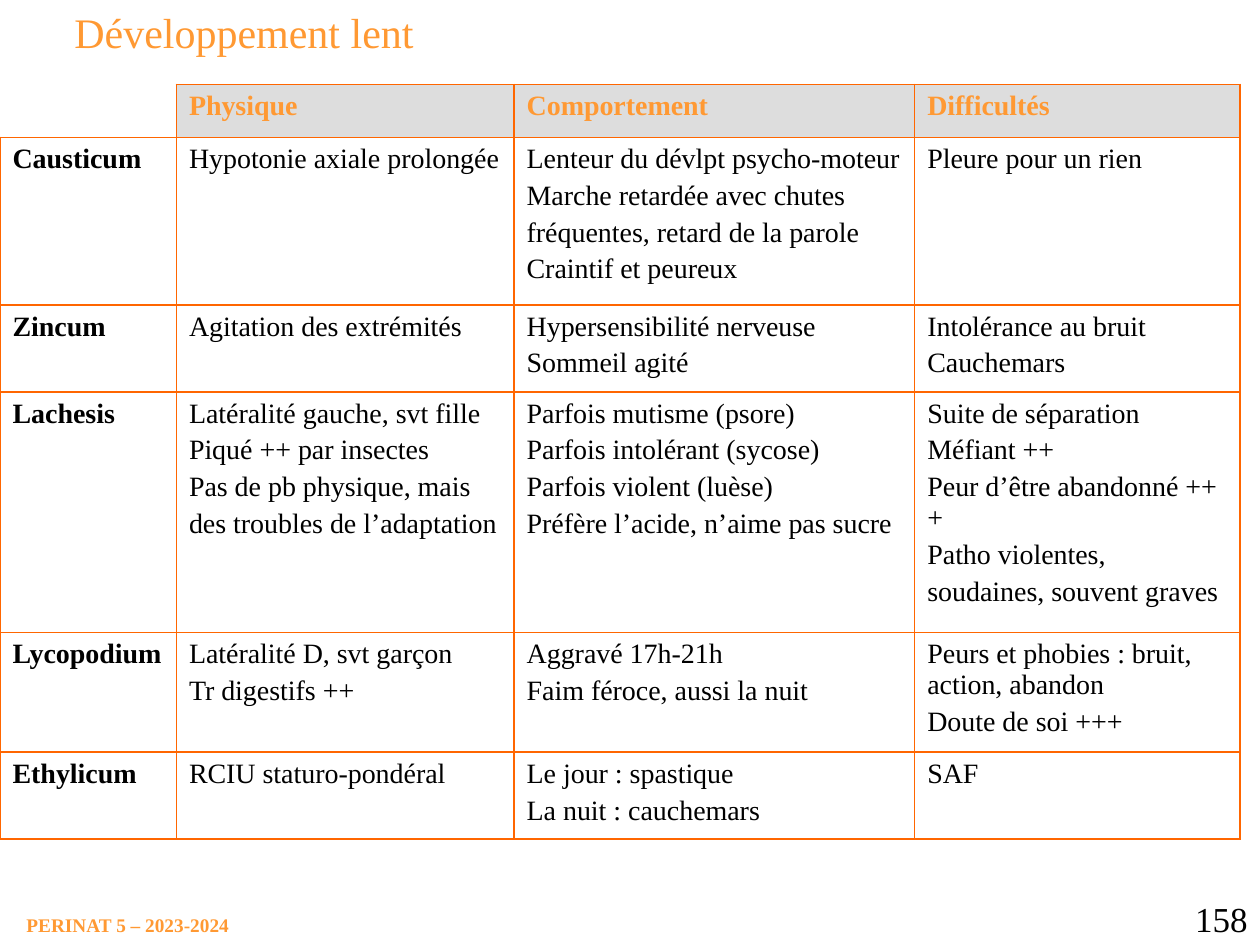
from lxml import etree
from pptx import Presentation
from pptx.dml.color import RGBColor
from pptx.enum.text import MSO_ANCHOR, MSO_AUTO_SIZE, PP_ALIGN
from pptx.oxml.ns import qn
from pptx.util import Inches, Pt

LEFT, RIGHT, TOP = PP_ALIGN.LEFT, PP_ALIGN.RIGHT, MSO_ANCHOR.TOP
FONT = "Times New Roman"
ORANGE, BORDER, GREY, BLACK = "FF9933", "FF6600", "DDDDDD", "000000"

TITLE = "Développement lent"
FOOTER = "PERINAT 5 – 2023-2024"
PAGE_NUMBER = "158"
HEADINGS = ["Physique", "Comportement", "Difficultés"]
REMEDIES = [
    ("Causticum",
     ["Hypotonie axiale prolongée"],
     ["Lenteur du dévlpt psycho-moteur", "Marche retardée avec chutes",
      "fréquentes, retard de la parole", "Craintif et peureux"],
     ["Pleure pour un rien"]),
    ("Zincum",
     ["Agitation des extrémités"],
     ["Hypersensibilité nerveuse", "Sommeil agité"],
     ["Intolérance au bruit", "Cauchemars"]),
    ("Lachesis",
     ["Latéralité gauche, svt fille", "Piqué ++ par insectes",
      "Pas de pb physique, mais", "des troubles de l’adaptation"],
     ["Parfois mutisme (psore)", "Parfois intolérant (sycose)",
      "Parfois violent (luèse)", "Préfère l’acide, n’aime pas sucre"],
     ["Suite de séparation", "Méfiant ++", "Peur d’être abandonné +++",
      "Patho violentes,", "soudaines, souvent graves"]),
    ("Lycopodium",
     ["Latéralité D, svt garçon", "Tr digestifs ++"],
     ["Aggravé 17h-21h", "Faim féroce, aussi la nuit"],
     ["Peurs et phobies : bruit, action, abandon", "Doute de soi +++"]),
    ("Ethylicum",
     ["RCIU staturo-pondéral"],
     ["Le jour : spastique", "La nuit : cauchemars"],
     ["SAF"]),
]
COLUMN_WIDTHS = [1.4, 2.68, 3.18, 2.58]
ROW_HEIGHTS = [0.42, 1.33, 0.69, 1.91, 0.95, 0.69]


def rgb(color):
    return RGBColor.from_string(color)


def write(frame, lines, size, color, bold=False, align=LEFT, space=0):
    for i, line in enumerate(lines):
        paragraph = frame.add_paragraph() if i else frame.paragraphs[0]
        paragraph.alignment = align
        paragraph.space_before = Pt(space)
        run = paragraph.add_run()
        run.text = line
        run.font.name, run.font.size, run.font.bold = FONT, Pt(size), bold
        run.font.color.rgb = rgb(color)


def set_borders(cell, drawn):
    """Draw the named sides (L, R, T, B) and clear the others."""
    properties = cell._tc.get_or_add_tcPr()
    for position, side in enumerate("LRTB"):
        line = etree.Element(qn(f"a:ln{side}"), w=str(Pt(1)))
        if side in drawn:
            fill = etree.SubElement(line, qn("a:solidFill"))
            etree.SubElement(fill, qn("a:srgbClr"), val=BORDER)
        else:
            etree.SubElement(line, qn("a:noFill"))
        properties.insert(position, line)


def add_text(slide, box, text, size, color, **style):
    frame = slide.shapes.add_textbox(*map(Inches, box)).text_frame
    write(frame, [text], size, color, **style)
    return frame


def add_remedy_table(slide):
    rows = [[[]] + [[heading] for heading in HEADINGS]]
    rows += [[[name], *columns] for name, *columns in REMEDIES]
    table = slide.shapes.add_table(
        len(rows), len(COLUMN_WIDTHS), Inches(0), Inches(0.67),
        Inches(sum(COLUMN_WIDTHS)), Inches(sum(ROW_HEIGHTS))).table
    table.first_row = table.horz_banding = False
    for column, width in zip(table.columns, COLUMN_WIDTHS):
        column.width = Inches(width)
    for row, height in zip(table.rows, ROW_HEIGHTS):
        row.height = Inches(height)

    for r, row in enumerate(rows):
        for c, lines in enumerate(row):
            cell = table.cell(r, c)
            heading = r == 0 and c > 0
            if heading:
                cell.fill.solid()
                cell.fill.fore_color.rgb = rgb(GREY)
            else:
                cell.fill.background()
            set_borders(cell, "LRTB" if lines else "RB")
            write(cell.text_frame, lines, 16, ORANGE if heading else BLACK,
                  bold=r == 0 or c == 0, space=3.2)


def main():
    prs = Presentation()
    prs.slide_width, prs.slide_height = Inches(10), Inches(7.5)
    slide = prs.slides.add_slide(prs.slide_layouts[5])

    footer = add_text(slide, (0.21, 7.25, 1.64, 0.19), FOOTER, 11, ORANGE, bold=True)
    footer.margin_left = footer.margin_right = 0
    footer.margin_top = footer.margin_bottom = 0
    footer.word_wrap = False
    number = add_text(slide, (9.17, 7.07, 0.83, 0.43), PAGE_NUMBER, 20, BLACK, align=RIGHT)
    number.word_wrap = True

    add_remedy_table(slide)

    title = slide.shapes.title
    title.left, title.top, title.width, title.height = map(Inches, (0.49, 0, 3.1, 0.56))
    title.text_frame.vertical_anchor = TOP
    title.text_frame.auto_size = MSO_AUTO_SIZE.NONE
    write(title.text_frame, [TITLE], 24, ORANGE)

    prs.save("out.pptx")


if __name__ == "__main__":
    main()
